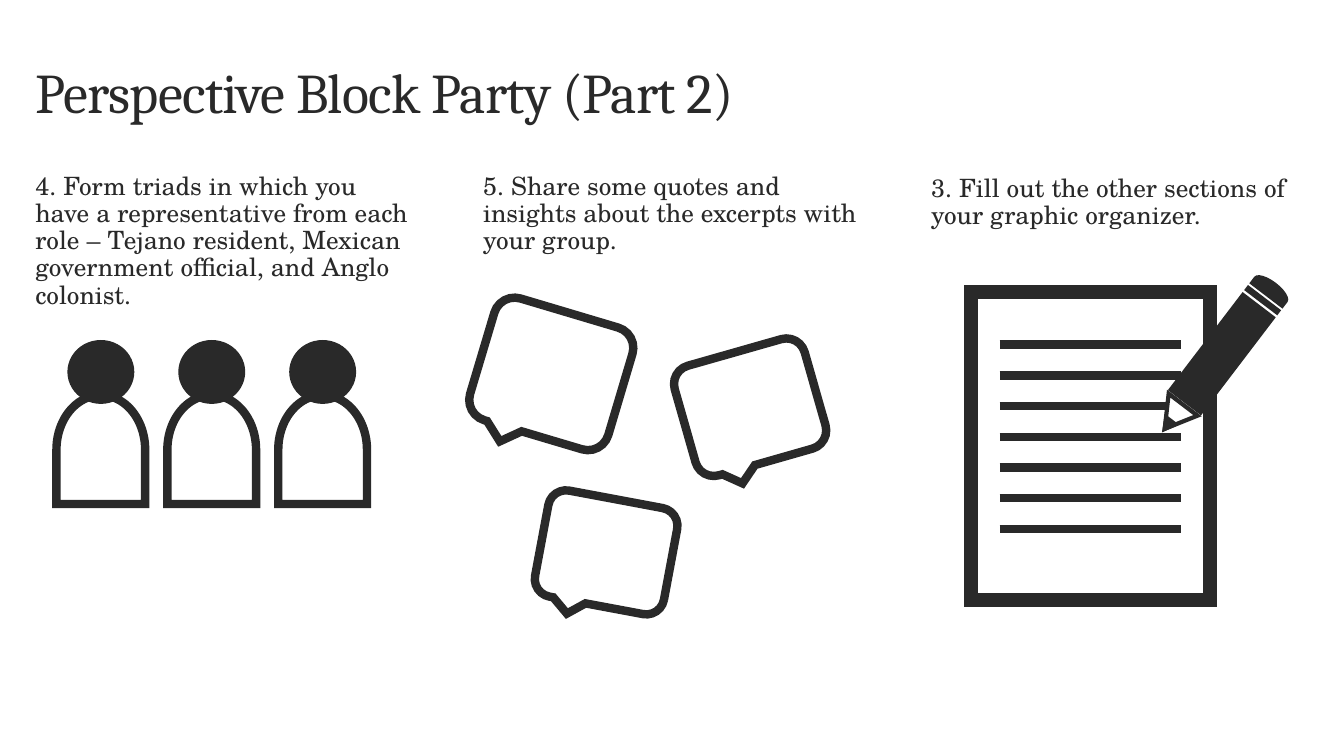
from math import cos, radians, sin

from lxml.etree import SubElement as Sub
from pptx import Presentation
from pptx.dml.color import RGBColor
from pptx.enum.shapes import MSO_CONNECTOR as Conn, MSO_SHAPE as Kind
from pptx.enum.text import MSO_ANCHOR as Anchor, MSO_AUTO_SIZE as Fit, PP_ALIGN as Align
from pptx.oxml.ns import qn
from pptx.util import Inches, Pt

HUES = {"ink": "292929", "paper": "FFFFFF"}
HEAD, BODY = "Cambria", "TeX Gyre Schola"

# The grid has square cells, 75 rows high and 133.3 columns wide
ROWS, COLS = 75, 133.3
CELL = Inches(0.1)
LEFT, STEP = 2.5, COLS / 3
STEPS = [
    "4. Form triads in which you have a representative from each role – "
    "Tejano resident, Mexican government official, and Anglo colonist.",
    "5. Share some quotes and insights about the excerpts with your group.",
    "3. Fill out the other sections of your graphic organizer.",
]


def grid(*cells):
    return [round(n * CELL) for n in cells]


def hue(name):
    return RGBColor.from_string(HUES[name])


def draw(shapes, kind, mid, size, fill="ink", width=1, turn=0):
    """Add a shape by its centre and size in cells."""
    (x, y), (w, h) = mid, size
    item = shapes.add_shape(kind, *grid(x - w / 2, y - h / 2, w, h))
    item.shadow.inherit = False
    item.rotation = turn
    item.fill.solid()
    item.fill.fore_color.rgb = hue(fill)
    item.line.color.rgb = hue("ink")
    item.line.width = Pt(width)
    Sub(item.line._get_or_add_ln(), qn("a:miter"), lim="800000")
    return item


def rule(shapes, x, y, w):
    line = shapes.add_connector(Conn.STRAIGHT, *grid(x, y, x + w, y))
    line.line.color.rgb = hue("ink")
    line.line.width = Pt(6)
    Sub(line._element.spPr, qn("a:effectLst"))


def write(item, box, text, font, size, anchor=Anchor.TOP, track=0):
    item.left, item.top, item.width, item.height = grid(*box)
    frame = item.text_frame
    frame.word_wrap = True
    frame.auto_size = Fit.NONE
    frame.vertical_anchor = anchor
    para = frame.paragraphs[0]
    props = para._p.get_or_add_pPr()
    props.set("marL", "0")
    props.set("indent", "0")
    Sub(props, qn("a:buNone"))
    para.alignment = Align.LEFT
    para.line_spacing = 0.9
    para.space_before = Pt(0)
    run = para.add_run()
    run.text = text
    run.font.name, run.font.size = font, Pt(size)
    run.font.color.rgb = hue("ink")
    if track:
        run._r.get_or_add_rPr().set("spc", str(track))


def triad(shapes, box):
    """Three people side by side."""
    x, y, w, h = box
    for n in range(3):
        mid = x + w * (2 * n + 1) / 6
        draw(shapes, Kind.FLOWCHART_DELAY, (mid, y + h - 5.4), (10.8, 8.8),
             "paper", 6, 270)
        draw(shapes, Kind.OVAL, (mid, y + 3.1), (6.5, 6.2))


def talk(shapes, box):
    """Three tilted speech bubbles, as shares of the box."""
    x, y, w, h = box
    for across, down, size, turn in [
        (0.22, 0.22, (14.3, 12.6), 16.6),
        (0.8, 0.33, (13.4, 11.3), 344.1),
        (0.38, 0.81, (13, 10.7), 10.6),
    ]:
        draw(shapes, Kind.ROUNDED_RECTANGULAR_CALLOUT,
             (x + w * across, y + h * down), size, "paper", 6, turn)


def pencil(shapes, mid, tilt):
    """Parts sit at their distance from the middle along the tilted axis."""
    x, y = mid
    for kind, off, size, fill, width, turn in [
        (Kind.RECTANGLE, 0, (4, 12.1), "ink", 1, 0),
        (Kind.ISOSCELES_TRIANGLE, -7.84, (3.6, 3), "paper", 3, 180),
        (Kind.ISOSCELES_TRIANGLE, -8.87, (1.1, 1), "ink", 3, 180),
        (Kind.RECTANGLE, 6.68, (4, 0.5), "ink", 1, 0),
        (Kind.FLOWCHART_DELAY, 8.03, (1.5, 4), "ink", 1, 270),
    ]:
        spot = x + off * sin(radians(tilt)), y - off * cos(radians(tilt))
        draw(shapes, kind, spot, size, fill, width, (tilt + turn) % 360)


def sheet(shapes, box):
    """A lined page with a pencil."""
    x, y, w, h = box
    parts = shapes.add_group_shape().shapes
    draw(parts, Kind.RECTANGLE, (x + w / 2, y + h / 2), (w, h), "paper", 10)
    for n in range(7):
        rule(parts, x + 0.12 * w, y + h * (0.17 + 0.1 * n), 0.76 * w)
    pencil(parts, (x + 1.05 * w, y + 0.2 * h), 37.3)


def main():
    deck = Presentation()
    deck.slide_width, deck.slide_height = Inches(13.33), Inches(7.5)
    slide = deck.slides.add_slide(deck.slide_layouts[1])
    shapes = slide.shapes

    # Title and the three steps
    write(shapes.title, (LEFT, 2.2, 115, 14.5), "Perspective Block Party (Part 2)",
          HEAD, 40, Anchor.MIDDLE, -50)
    for n, text in enumerate(STEPS):
        box = (LEFT + n * STEP, 16.9 if n == 2 else 16.7, 39.5, 17.9 if n == 0 else 14.5)
        item = slide.placeholders[1] if n == 0 else shapes.add_textbox(*grid(*box))
        write(item, box, text, BODY, 18)

    # Drawings, one under each step
    sheet(shapes, (96.3, 29, 23.7, 30.5))
    talk(shapes, (47.2, 30.5, 34, 30))
    triad(shapes, (4.5, 33.8, 33, 16.2))
    deck.save("out.pptx")


if __name__ == "__main__":
    main()
